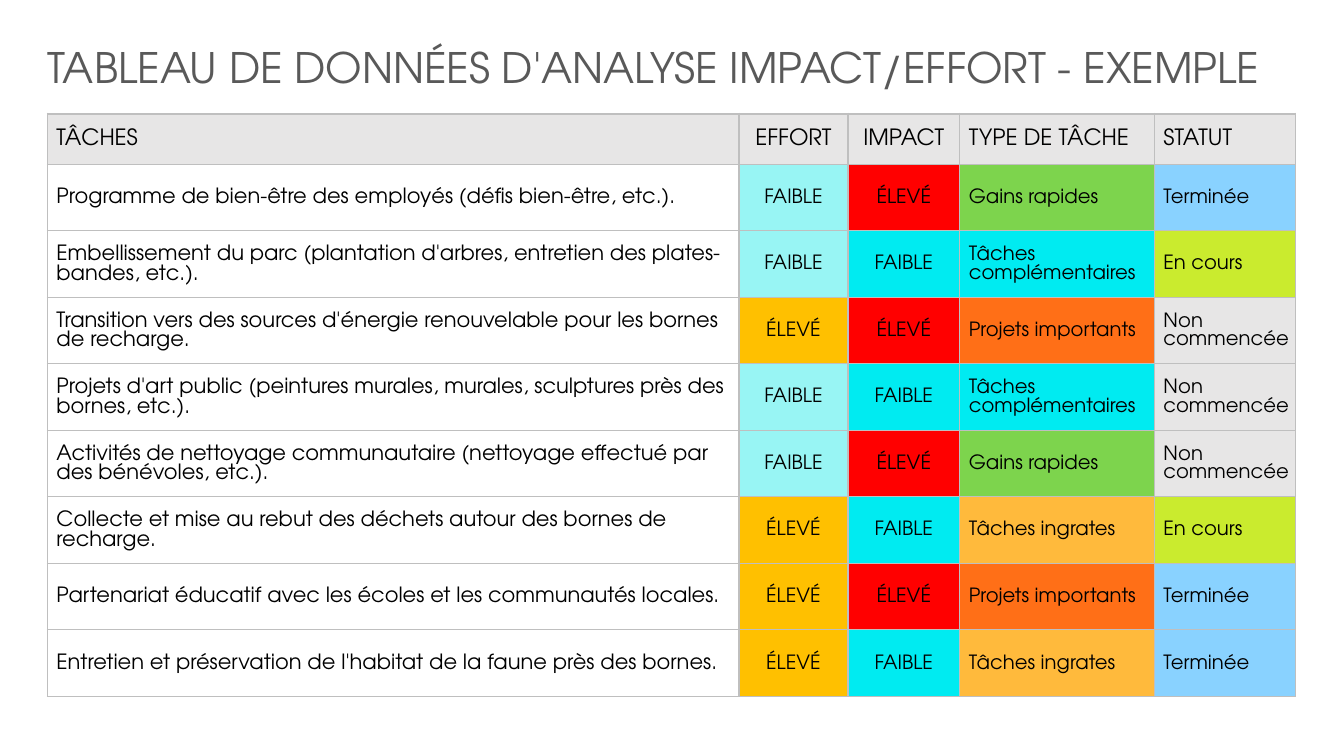
from pptx import Presentation
from pptx.dml.color import RGBColor
from pptx.enum.text import MSO_ANCHOR, PP_ALIGN
from pptx.oxml import parse_xml
from pptx.oxml.ns import nsdecls
from pptx.util import Inches, Pt

THEME = {
    "font": "TeX Gyre Adventor",
    "title": "595959", "ink": "000000", "border": "BFBFBF",
    "header": "E7E6E6", "task": "FFFFFF",
    "title_size": 30, "header_size": 16, "task_size": 15, "rating_size": 14,
    "effort": {"FAIBLE": "98F5F4", "ÉLEVÉ": "FFC000"},
    "impact": {"FAIBLE": "00EBF1", "ÉLEVÉ": "FF0000"},
    "kind": {"Gains rapides": "7DD44D", "Tâches complémentaires": "00EBF1",
             "Projets importants": "FF6F17", "Tâches ingrates": "FFBA3C"},
    "status": {"Terminée": "89D2FF", "En cours": "CAEB2E", "Non commencée": "E7E6E6"},
}


def write(frame, text, size, color=THEME["ink"], align=PP_ALIGN.LEFT):
    paragraph = frame.paragraphs[0]
    paragraph.alignment = align
    run = paragraph.add_run()
    run.text = text
    run.font.name = THEME["font"]
    run.font.size = Pt(size)
    run.font.color.rgb = RGBColor.from_string(color)


def fill_cell(cell, color, centered, top_width):
    cell.vertical_anchor = MSO_ANCHOR.MIDDLE
    cell.margin_left = Inches(0.01 if centered else 0.09)
    cell.margin_top = cell.margin_right = Inches(0.01)
    cell.margin_bottom = Inches(0)
    properties = cell._tc.get_or_add_tcPr()
    for side in ("lnL", "lnR", "lnT", "lnB"):
        width = Pt(top_width if side == "lnT" else 1)
        properties.append(parse_xml(
            f'<a:{side} {nsdecls("a")} w="{width}"><a:solidFill>'
            f'<a:srgbClr val="{THEME["border"]}"/></a:solidFill></a:{side}>'))
    cell.fill.solid()
    cell.fill.fore_color.rgb = RGBColor.from_string(color)


headings = ["TÂCHES", "EFFORT", "IMPACT", "TYPE DE TÂCHE", "STATUT"]
tasks = [
    ("Programme de bien-être des employés (défis bien-être, etc.).",
     "FAIBLE", "ÉLEVÉ", "Gains rapides", "Terminée"),
    ("Embellissement du parc (plantation d'arbres, entretien des plates-bandes, etc.).",
     "FAIBLE", "FAIBLE", "Tâches complémentaires", "En cours"),
    ("Transition vers des sources d'énergie renouvelable pour les bornes de recharge.",
     "ÉLEVÉ", "ÉLEVÉ", "Projets importants", "Non commencée"),
    ("Projets d'art public (peintures murales, murales, sculptures près des bornes, etc.).",
     "FAIBLE", "FAIBLE", "Tâches complémentaires", "Non commencée"),
    ("Activités de nettoyage communautaire (nettoyage effectué par des bénévoles, etc.).",
     "FAIBLE", "ÉLEVÉ", "Gains rapides", "Non commencée"),
    ("Collecte et mise au rebut des déchets autour des bornes de recharge.",
     "ÉLEVÉ", "FAIBLE", "Tâches ingrates", "En cours"),
    ("Partenariat éducatif avec les écoles et les communautés locales.",
     "ÉLEVÉ", "ÉLEVÉ", "Projets importants", "Terminée"),
    ("Entretien et préservation de l'habitat de la faune près des bornes.",
     "ÉLEVÉ", "FAIBLE", "Tâches ingrates", "Terminée"),
]
column_widths = [6.86, 1.08, 1.11, 1.93, 1.4]
column_colors = [{}, THEME["effort"], THEME["impact"], THEME["kind"], THEME["status"]]

presentation = Presentation()
presentation.slide_width = Inches(13.33)
presentation.slide_height = Inches(7.5)
slide = presentation.slides.add_slide(presentation.slide_layouts[6])

matrix = slide.shapes.add_table(
    len(tasks) + 1, len(headings),
    Inches(0.47), Inches(1.13), Inches(12.38), Inches(5.8)).table
matrix.first_row = False
matrix.horz_banding = False
for column, width in zip(matrix.columns, column_widths):
    column.width = Inches(width)

for row_index, entries in enumerate([headings, *tasks]):
    is_header = row_index == 0
    matrix.rows[row_index].height = Inches(0.5 if is_header else 0.66)
    for column_index, entry in enumerate(entries):
        cell = matrix.cell(row_index, column_index)
        centered = column_index in (1, 2)
        if is_header:
            color, size = THEME["header"], THEME["header_size"]
        elif column_index == 0:
            color, size = THEME["task"], THEME["task_size"]
        else:
            color, size = column_colors[column_index][entry], THEME["rating_size"]
        fill_cell(cell, color, centered, top_width=2.25 if is_header else 1)
        write(cell.text_frame, entry, size,
              align=PP_ALIGN.CENTER if centered else PP_ALIGN.LEFT)

title = slide.shapes.add_textbox(Inches(0.37), Inches(0.36), Inches(12.48), Inches(0.61))
title.text_frame.word_wrap = True
write(title.text_frame, "TABLEAU DE DONNÉES D'ANALYSE IMPACT/EFFORT - EXEMPLE",
      THEME["title_size"], color=THEME["title"])

presentation.save("out.pptx")
